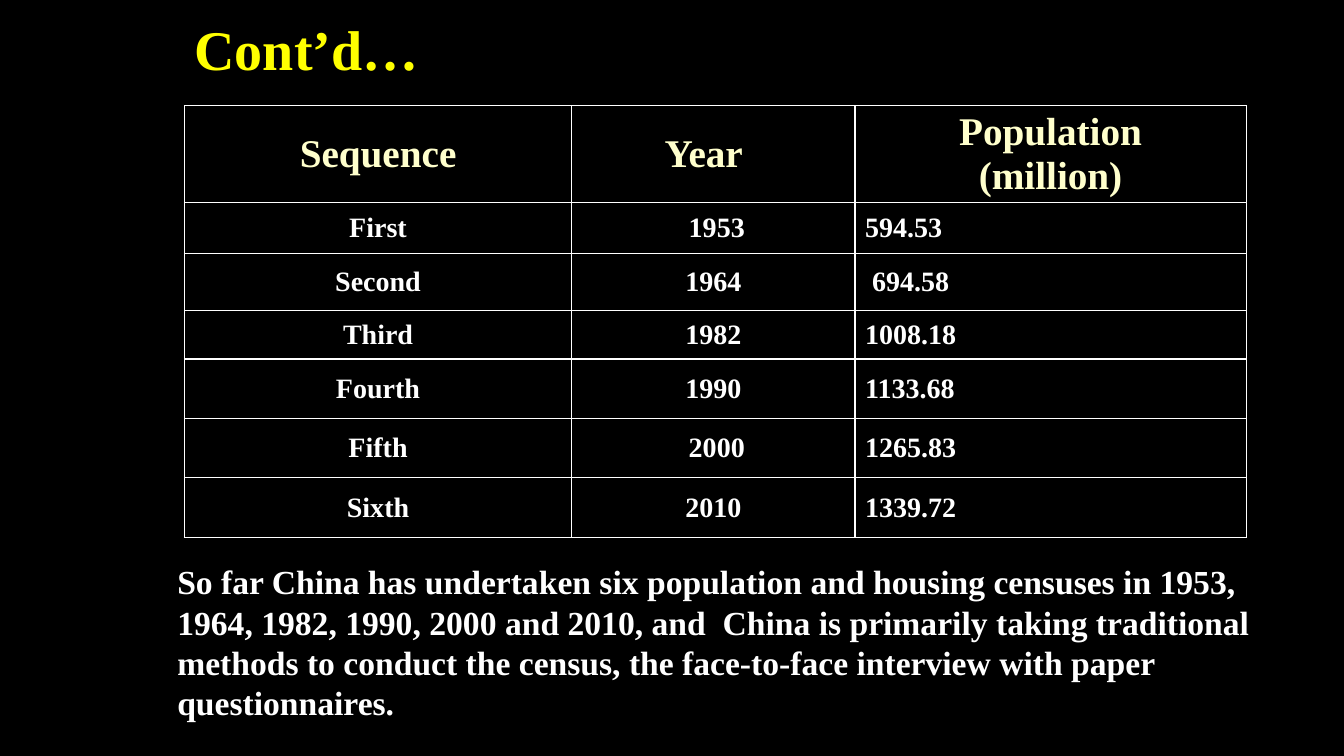
from lxml import etree
from pptx import Presentation
from pptx.dml.color import RGBColor
from pptx.enum.text import MSO_ANCHOR, MSO_AUTO_SIZE, PP_ALIGN
from pptx.oxml.ns import qn
from pptx.util import Inches, Pt

LEFT, CENTER = PP_ALIGN.LEFT, PP_ALIGN.CENTER
TOP, MIDDLE = MSO_ANCHOR.TOP, MSO_ANCHOR.MIDDLE
NO_FIT = MSO_AUTO_SIZE.NONE

BLACK = RGBColor(0x00, 0x00, 0x00)
WHITE = RGBColor(0xFF, 0xFF, 0xFF)
YELLOW = RGBColor(0xFF, 0xFF, 0x00)
CREAM = RGBColor(0xFF, 0xFF, 0xCC)
FONT = "Times New Roman"

COLS = [3.84, 2.81, 3.88]
ROWS = [0.82, 0.5, 0.57, 0.48, 0.59, 0.59, 0.59]
HEADS = ["Sequence", "Year", "Population\n(million)"]
DATA = [
    ("First", " 1953", "594.53"),
    ("Second", "1964", " 694.58"),
    ("Third", "1982", "1008.18"),
    ("Fourth", "1990", "1133.68"),
    ("Fifth", " 2000", "1265.83"),
    ("Sixth", "2010", "1339.72"),
]
NOTE = (
    "So far China has undertaken six population and housing censuses in 1953, "
    "1964, 1982, 1990, 2000 and 2010, and  China is primarily taking traditional "
    "methods to conduct the census, the face-to-face interview with paper "
    "questionnaires."
)


def write(frame, text, size, color, align=LEFT):
    for i, line in enumerate(text.split("\n")):
        para = frame.add_paragraph() if i else frame.paragraphs[0]
        para.alignment = align
        run = para.add_run()
        run.text = line
        font = run.font
        font.name = FONT
        font.size = Pt(size)
        font.bold = True
        font.color.rgb = color


def rule(cell):
    props = cell._tc.get_or_add_tcPr()
    for i, side in enumerate(("a:lnL", "a:lnR", "a:lnT", "a:lnB")):
        line = etree.Element(qn(side), w=str(Pt(1)))
        fill = etree.SubElement(line, qn("a:solidFill"))
        etree.SubElement(fill, qn("a:srgbClr"), val=str(WHITE))
        props.insert(i, line)


def add_title(slide, x, y, w, h):
    title = slide.shapes.title
    title.left, title.top, title.width, title.height = map(Inches, (x, y, w, h))
    frame = title.text_frame
    frame.auto_size = NO_FIT
    frame.vertical_anchor = TOP
    write(frame, "Cont’d…", 40, YELLOW)


def add_census(slide, x, y):
    box = map(Inches, (x, y, sum(COLS), sum(ROWS)))
    table = slide.shapes.add_table(len(ROWS), len(COLS), *box).table
    for col, width in zip(table.columns, COLS):
        col.width = Inches(width)
    for row, height in zip(table.rows, ROWS):
        row.height = Inches(height)
    for r, texts in enumerate([HEADS, *DATA]):
        size, color = (20, WHITE) if r else (28, CREAM)
        for c, text in enumerate(texts):
            cell = table.cell(r, c)
            cell.fill.solid()
            cell.fill.fore_color.rgb = BLACK
            cell.vertical_anchor = MIDDLE
            rule(cell)
            align = LEFT if r and c == 2 else CENTER
            write(cell.text_frame, text, size, color, align)
    table.cell(0, 1).margin_right = Inches(0.29)


def add_note(slide, x, y, w, h):
    frame = slide.shapes.add_textbox(*map(Inches, (x, y, w, h))).text_frame
    frame.word_wrap = True
    write(frame, NOTE, 24, WHITE)


def main():
    deck = Presentation()
    deck.slide_width, deck.slide_height = Inches(13.33), Inches(7.5)
    slide = deck.slides.add_slide(deck.slide_layouts[5])
    back = slide.background.fill
    back.solid()
    back.fore_color.rgb = BLACK
    add_title(slide, 1.83, 0.09, 10.53, 0.77)
    add_census(slide, 1.83, 1.05)
    add_note(slide, 1.66, 5.52, 10.95, 1.72)
    deck.save("out.pptx")


if __name__ == "__main__":
    main()
